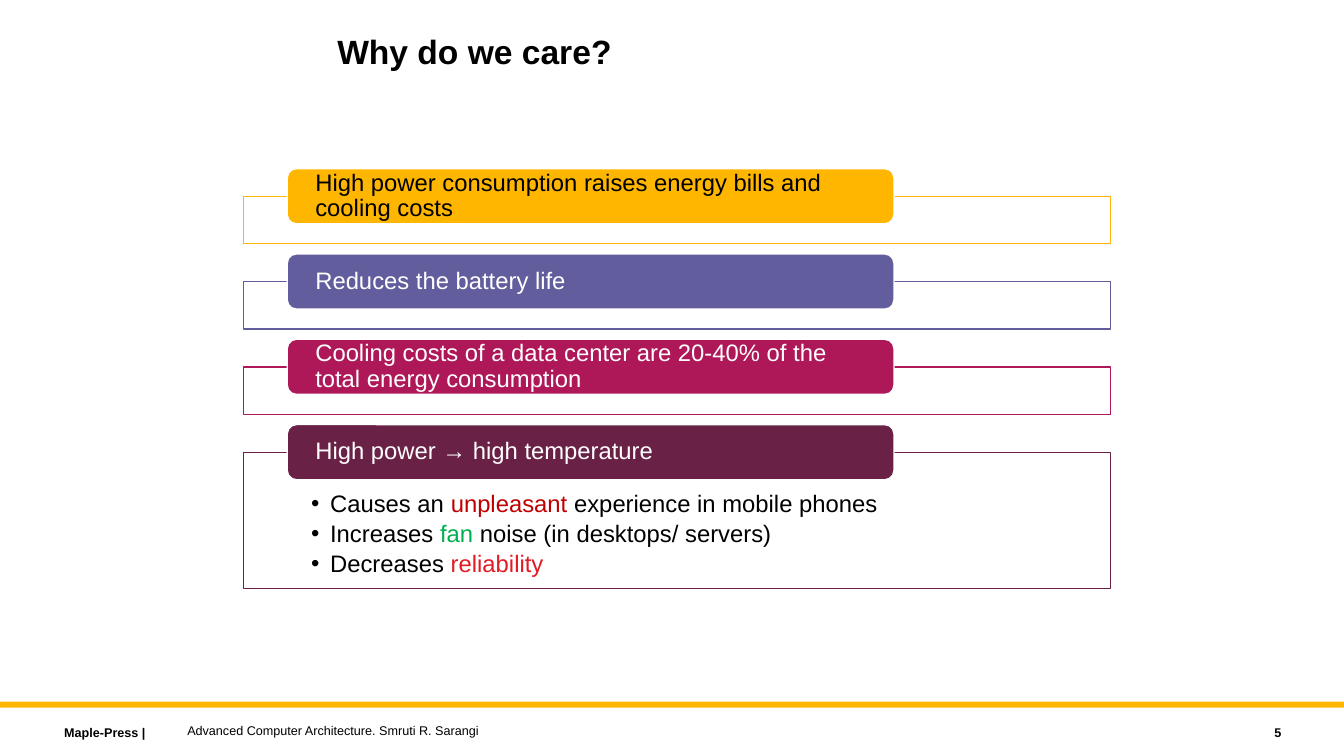
import pptx
import pptx.dml.color
import pptx.enum.shapes
import pptx.enum.text
import pptx.oxml.ns
import pptx.util
from lxml import etree

Cm, Pt = pptx.util.Cm, pptx.util.Pt
RGBColor = pptx.dml.color.RGBColor
SHAPE = pptx.enum.shapes.MSO_SHAPE
ANCHOR = pptx.enum.text.MSO_ANCHOR
ALIGN = pptx.enum.text.PP_ALIGN
qn = pptx.oxml.ns.qn

BLACK = RGBColor(0x00, 0x00, 0x00)
WHITE = RGBColor(0xFF, 0xFF, 0xFF)
AMBER = RGBColor(0xFF, 0xB6, 0x00)
VIOLET = RGBColor(0x62, 0x5D, 0x9C)
MAGENTA = RGBColor(0xAF, 0x18, 0x58)
PLUM = RGBColor(0x69, 0x21, 0x46)
DARK_RED = RGBColor(0xC0, 0x00, 0x00)
GREEN = RGBColor(0x00, 0xB0, 0x50)
RED = RGBColor(0xE2, 0x1A, 0x23)

REASONS = [
    ("High power consumption raises energy bills and cooling costs", AMBER, BLACK),
    ("Reduces the battery life", VIOLET, WHITE),
    ("Cooling costs of a data center are 20-40% of the total energy consumption",
     MAGENTA, WHITE),
    ("High power → high temperature", PLUM, WHITE),
]
EFFECTS = [
    [("Causes an ", BLACK), ("unpleasant", DARK_RED),
     (" experience in mobile phones", BLACK)],
    [("Increases ", BLACK), ("fan", GREEN), (" noise (in desktops/ servers)", BLACK)],
    [("Decreases ", BLACK), ("reliability", RED)],
]
ROW_TOP, ROW_PITCH = 4.25, 2.15
FRAME_DROP = 0.7


def add_run(p, text, size=17, color=BLACK, bold=False, font="Arial"):
    r = p.add_run()
    r.text = text
    r.font.name, r.font.size, r.font.bold = font, Pt(size), bold
    r.font.color.rgb = color


class Deck:
    def __init__(self):
        self.prs = pptx.Presentation()
        self.prs.slide_width, self.prs.slide_height = Cm(33.87), Cm(19.05)
        self.slide = self.prs.slides.add_slide(self.prs.slide_layouts[6])

    def box(self, kind, x, y, w, h, fill, line=None):
        sp = self.slide.shapes.add_shape(kind, Cm(x), Cm(y), Cm(w), Cm(h))
        sp.shadow.inherit = False
        sp.fill.solid()
        sp.fill.fore_color.rgb = fill
        if line is None:
            sp.line.fill.background()
        else:
            sp.line.color.rgb = line
            sp.line.width = Pt(1)
        return sp

    def label(self, x, y, w, h, text, anchor=ANCHOR.MIDDLE, align=ALIGN.LEFT, **fmt):
        tf = self.slide.shapes.add_textbox(Cm(x), Cm(y), Cm(w), Cm(h)).text_frame
        tf.word_wrap = True
        tf.vertical_anchor = anchor
        p = tf.paragraphs[0]
        p.alignment = align
        add_run(p, text, **fmt)
        return p

    def frame(self, y, h, color):
        sp = self.box(SHAPE.RECTANGLE, 6.14, y, 21.84, h, WHITE, color)
        white = sp.fill._xPr.find(qn("a:solidFill"))[0]
        etree.SubElement(white, qn("a:alpha"), val="90000")
        return sp

    def pill(self, y, text, fill, color):
        sp = self.box(SHAPE.ROUNDED_RECTANGLE, 7.24, y, 15.29, 1.39, fill, WHITE)
        tf = sp.text_frame
        tf.word_wrap = True
        tf.vertical_anchor = ANCHOR.MIDDLE
        tf.margin_left = tf.margin_right = Cm(0.64)
        tf.margin_top = tf.margin_bottom = 0
        p = tf.paragraphs[0]
        p.alignment, p.line_spacing = ALIGN.LEFT, 0.9
        add_run(p, text, color=color)

    def bullets(self, sp, items):
        tf = sp.text_frame
        tf.word_wrap = True
        tf.vertical_anchor = ANCHOR.TOP
        tf.margin_left = tf.margin_right = Cm(1.7)
        tf.margin_top, tf.margin_bottom = Cm(0.99), Cm(0.33)
        for i, pieces in enumerate(items):
            p = tf.add_paragraph() if i else tf.paragraphs[0]
            pPr = p._p.get_or_add_pPr()
            pPr.set("marL", str(Cm(0.48)))
            pPr.set("indent", str(-Cm(0.48)))
            etree.SubElement(pPr, qn("a:buFont"), typeface="Arial")
            etree.SubElement(pPr, qn("a:buChar"), char="•")
            p.level, p.alignment = 1, ALIGN.LEFT
            p.line_spacing, p.space_after = 0.9, Pt(3)
            for text, color in pieces:
                add_run(p, text, color=color)


def main():
    deck = Deck()

    # Title
    title = deck.label(8.25, 0.76, 19.05, 2.29, "Why do we care?",
                       anchor=ANCHOR.TOP, size=24, bold=True)
    title.line_spacing = 0.9

    # Reasons: a frame with a pill on its top edge, the last frame with details
    for i, (text, fill, color) in enumerate(REASONS):
        y = ROW_TOP + i * ROW_PITCH
        last = i == len(REASONS) - 1
        sp = deck.frame(y + FRAME_DROP, 3.43 if last else 1.19, fill)
        if last:
            deck.bullets(sp, EFFECTS)
        deck.pill(y, text, fill, color)

    # Footer
    deck.box(SHAPE.RECTANGLE, 0, 17.68, 33.87, 0.15, AMBER)
    deck.label(1.37, 18.14, 5.77, 0.64, "Maple-Press |", size=9, bold=True)
    deck.label(4.47, 18.08, 20.32, 0.64,
               "Advanced Computer Architecture. Smruti R. Sarangi", size=9)
    deck.label(28.98, 18.14, 3.56, 0.64, "5", align=ALIGN.RIGHT, size=9, bold=True)

    deck.prs.save("out.pptx")


if __name__ == "__main__":
    main()
